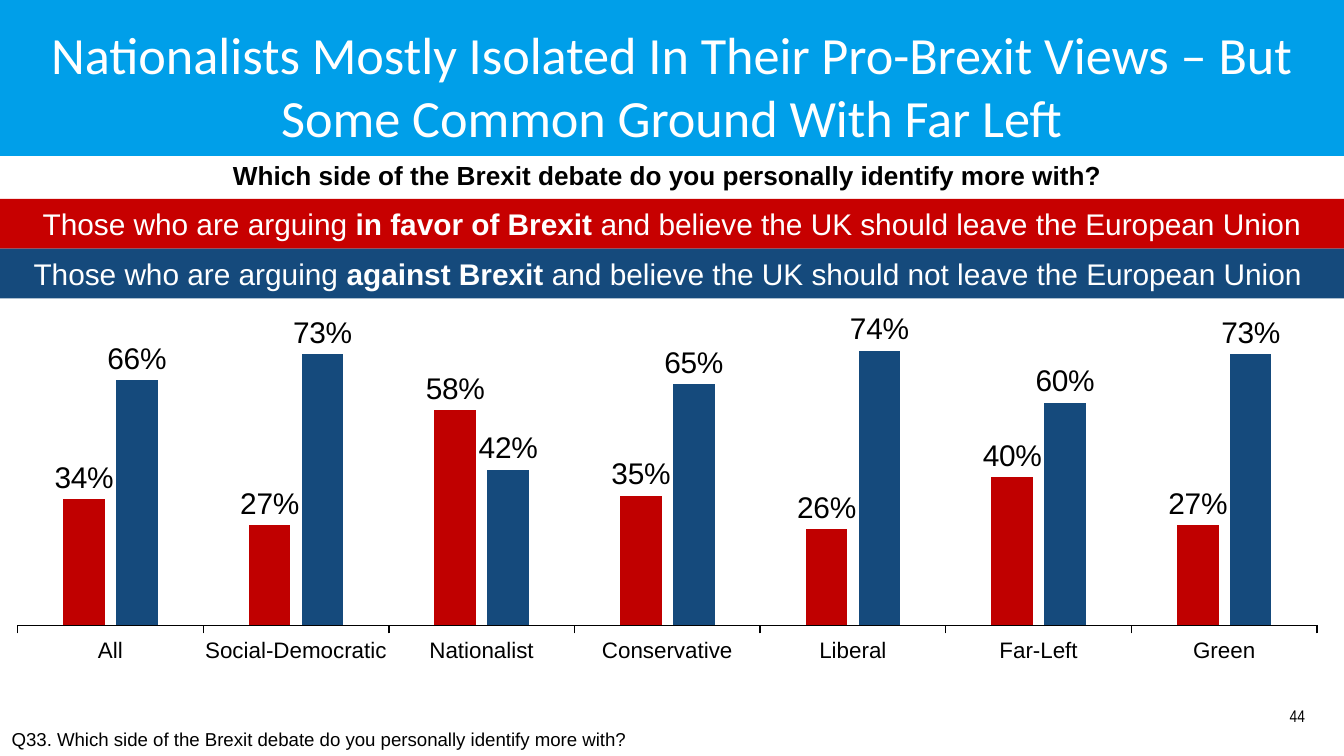
from lxml import etree
from pptx import Presentation
from pptx.chart.data import CategoryChartData
from pptx.dml.color import RGBColor
from pptx.enum.chart import XL_CHART_TYPE, XL_LABEL_POSITION, XL_TICK_MARK
from pptx.enum.shapes import MSO_SHAPE
from pptx.enum.text import MSO_ANCHOR, MSO_AUTO_SIZE, PP_ALIGN
from pptx.oxml.ns import qn
from pptx.util import Cm, Pt

SKY = RGBColor(0x00, 0x9F, 0xE9)
RED = RGBColor(0xC7, 0x00, 0x00)
BAR_RED = RGBColor(0xC0, 0x00, 0x00)
NAVY = RGBColor(0x15, 0x4A, 0x7C)
BLACK = RGBColor(0x00, 0x00, 0x00)
WHITE = RGBColor(0xFF, 0xFF, 0xFF)

SLIDE_WIDTH, SLIDE_HEIGHT = 25.4, 14.29
BAND_TOP, BAND_HEIGHT = 3.76, 0.94

CATEGORIES = ["All", "Social-Democratic", "Nationalist", "Conservative",
              "Liberal", "Far-Left", "Green"]
FOR_BREXIT = [0.34, 0.27, 0.58, 0.35, 0.26, 0.40, 0.27]
AGAINST_BREXIT = [0.66, 0.73, 0.42, 0.65, 0.74, 0.60, 0.73]


class SlideBuilder:
    def __init__(self, slide, font="Arial"):
        self.slide = slide
        self.font = font

    def style(self, font, size, color, name=None):
        font.name = name or self.font
        font.size = Pt(size)
        font.color.rgb = color

    def fill_text(self, shape, parts, size, color, align=PP_ALIGN.CENTER,
                  bold=(), name=None, wrap=True):
        """Fill a shape with one paragraph; bold lists the bold runs."""
        text_frame = shape.text_frame
        text_frame.word_wrap = wrap
        text_frame.auto_size = MSO_AUTO_SIZE.NONE
        text_frame.vertical_anchor = MSO_ANCHOR.MIDDLE
        paragraph = text_frame.paragraphs[0]
        paragraph.alignment = align
        paragraph.space_before = Pt(0)
        for index, part in enumerate(parts):
            run = paragraph.add_run()
            run.text = part
            self.style(run.font, size, color, name)
            run.font.bold = index in bold

    def title(self, text, box):
        title = self.slide.shapes.title
        title.left, title.top, title.width, title.height = map(Cm, box)
        self.fill_text(title, [text], 28, WHITE, name="Calibri")
        return title

    def band(self, top, height, color):
        shape = self.slide.shapes.add_shape(
            MSO_SHAPE.RECTANGLE, 0, Cm(top), Cm(SLIDE_WIDTH), Cm(height))
        shape.shadow.inherit = False
        shape.fill.solid()
        shape.fill.fore_color.rgb = color
        shape.line.fill.background()
        return shape

    def text(self, text, box, size, **options):
        shape = self.slide.shapes.add_textbox(*map(Cm, box))
        self.fill_text(shape, [text], size, BLACK, **options)

    def column_chart(self, categories, series, box, plot_area):
        """Draw clustered columns; series holds (name, values, color)."""
        data = CategoryChartData(number_format="0%")
        data.categories = categories
        for name, values, _ in series:
            data.add_series(name, values)
        chart = self.slide.shapes.add_chart(
            XL_CHART_TYPE.COLUMN_CLUSTERED, *map(Cm, box), data).chart
        chart.has_legend = False
        chart.has_title = False
        self.style(chart.font, 10, NAVY)

        # Axes
        value_axis = chart.value_axis
        value_axis.minimum_scale, value_axis.maximum_scale = 0, 0.8
        value_axis.has_major_gridlines = False
        value_axis.visible = False
        category_axis = chart.category_axis
        category_axis.major_tick_mark = XL_TICK_MARK.OUTSIDE
        category_axis.format.line.color.rgb = BLACK
        category_axis.format.line.width = Pt(0.75)
        self.style(category_axis.tick_labels.font, 12, BLACK)

        # Columns and their labels
        plot = chart.plots[0]
        plot.vary_by_categories = False
        plot.gap_width, plot.overlap = 219, -27
        for column, (_, _, color) in zip(plot.series, series):
            column.format.fill.solid()
            column.format.fill.fore_color.rgb = color
            labels = column.data_labels
            labels.show_value = True
            labels.number_format = "0%"
            labels.number_format_is_linked = False
            labels.position = XL_LABEL_POSITION.OUTSIDE_END
            self.style(labels.font, 16, BLACK)
        self.place_plot(chart, plot_area)

    def place_plot(self, chart, plot_area):
        """Fix the inner plot area, given as fractions of the chart."""
        area = chart._chartSpace.find(".//" + qn("c:plotArea"))
        for old_layout in area.findall(qn("c:layout")):
            area.remove(old_layout)
        layout = etree.Element(qn("c:layout"))
        area.insert(0, layout)
        manual = etree.SubElement(layout, qn("c:manualLayout"))
        settings = [("layoutTarget", "inner"), ("xMode", "edge"), ("yMode", "edge")]
        settings += zip("xywh", plot_area)
        for tag, value in settings:
            etree.SubElement(manual, qn("c:" + tag)).set("val", str(value))


def main():
    presentation = Presentation()
    presentation.slide_width = Cm(SLIDE_WIDTH)
    presentation.slide_height = Cm(SLIDE_HEIGHT)
    slide = presentation.slides.add_slide(presentation.slide_layouts[5])
    builder = SlideBuilder(slide)

    # Title on its banner
    title = builder.title(
        "Nationalists Mostly Isolated In Their Pro-Brexit Views – But "
        "Some Common Ground With Far Left", (0.36, 1.02, 24.66, 1.17))
    banner = builder.band(0, 2.92, SKY)
    banner.line.color.rgb = SKY
    banner.line.width = Pt(2)
    title._element.addprevious(banner._element)

    # Question
    builder.text("Which side of the Brexit debate do you personally identify more with? ",
                 (4.06, 2.88, 17.25, 0.86), 14, bold=(0,))

    # Bands that explain the column colours
    bands = [
        (RED, "in favor of Brexit ",
         "and believe the UK should leave the European Union"),
        (NAVY, "against Brexit ",
         "and believe the UK should not leave the European Union "),
    ]
    for index, (color, side, belief) in enumerate(bands):
        band = builder.band(BAND_TOP + index * BAND_HEIGHT, BAND_HEIGHT, color)
        builder.fill_text(band, ["Those who are arguing ", side, belief], 16, WHITE,
                          bold=(1,))

    # Chart
    builder.column_chart(
        CATEGORIES,
        [("Series 1", FOR_BREXIT, BAR_RED), ("Series 2", AGAINST_BREXIT, NAVY)],
        (0.08, 5.64, 25.32, 7.11), (0.01, 0.08, 0.97, 0.79))

    # Footer
    builder.text("Q33. Which side of the Brexit debate do you personally identify more with?",
                 (-0.03, 13.8, 15.5, 0.33), 10, align=PP_ALIGN.LEFT)
    builder.text("44", (24.1, 13.21, 0.84, 0.64), 9, name="Arial Narrow", wrap=False)

    presentation.save("out.pptx")


if __name__ == "__main__":
    main()
